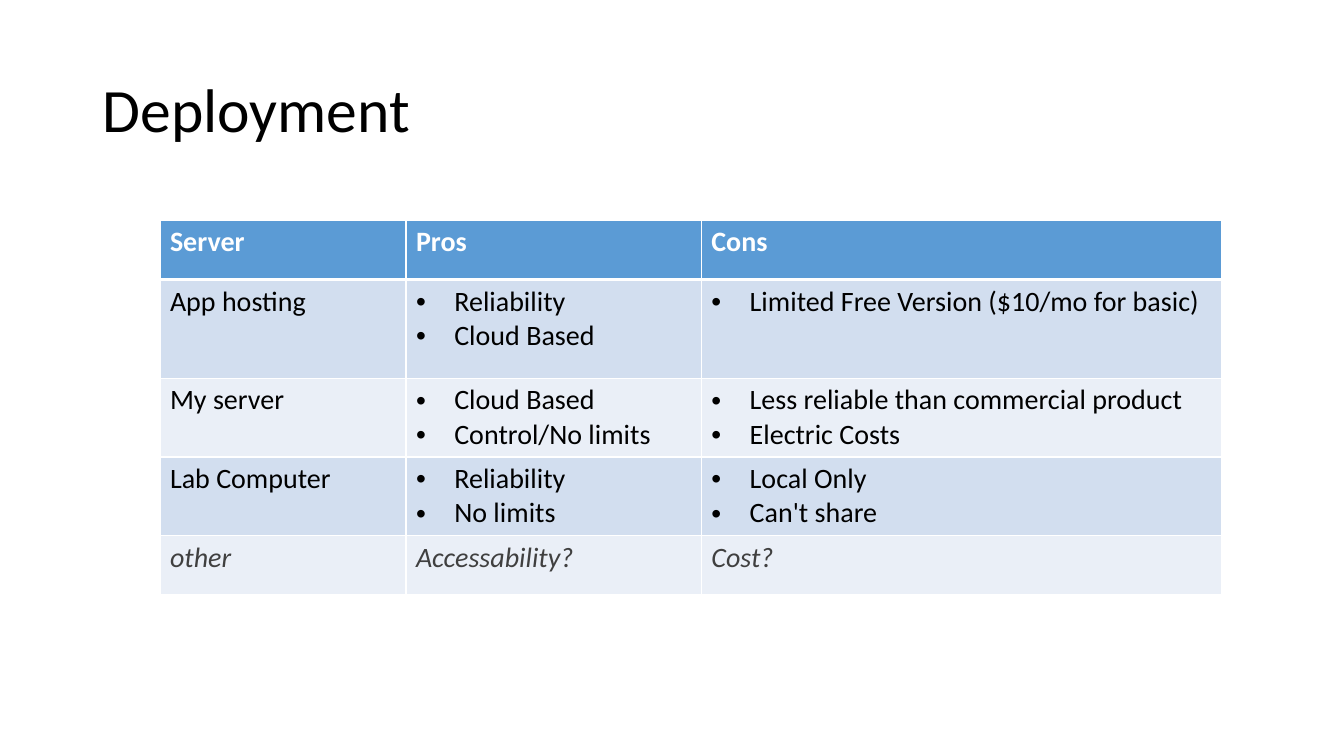
from dataclasses import dataclass

from lxml import etree
from pptx import Presentation
from pptx import util as u
from pptx.dml.color import RGBColor
from pptx.enum import text
from pptx.oxml import ns

SLIDE_WIDTH, SLIDE_HEIGHT = u.Inches(13.33), u.Inches(7.5)
FONT = "Calibri"
COLUMN_WIDTHS = (2.44, 2.93, 5.16)
ROW_HEIGHTS = (0.59, 0.98, 0.59, 0.59, 0.59)
HEADER_FILL = "5B9BD5"
BAND_FILLS = ("D2DEEF", "EAEFF7")
BULLET_INDENT = u.Inches(0.38)


@dataclass(frozen=True)
class ServerRow:
    server: str
    pros: tuple[str, ...]
    cons: tuple[str, ...]
    color: str = "000000"
    bold: bool = False
    italic: bool = False
    bulleted: bool = True


ROWS = (
    ServerRow("Server", ("Pros",), ("Cons",), "FFFFFF", bold=True, bulleted=False),
    ServerRow("App hosting", ("Reliability", "Cloud Based"),
              ("Limited Free Version ($10/mo for basic)",)),
    ServerRow("My server", ("Cloud Based", "Control/No limits"),
              ("Less reliable than commercial product", "Electric Costs")),
    ServerRow("Lab Computer", ("Reliability", "No limits"),
              ("Local Only", "Can't share")),
    ServerRow("other", ("Accessability?",), ("Cost?",), "404040",
              italic=True, bulleted=False),
)


def rgb(color: str) -> RGBColor:
    return RGBColor.from_string(color)


def across(share: float) -> int:
    return round(SLIDE_WIDTH * share)


def down(share: float) -> int:
    return round(SLIDE_HEIGHT * share)


def add_bullet(paragraph) -> None:
    properties = paragraph._p.get_or_add_pPr()
    properties.set("marL", str(BULLET_INDENT))
    properties.set("indent", str(-BULLET_INDENT))
    etree.SubElement(properties, ns.qn("a:buFont"), typeface="Arial")
    etree.SubElement(properties, ns.qn("a:buChar"), char="•")


def add_borders(cell, top: float, bottom: float) -> None:
    """Draw white borders; must run before the cell's fill is set."""
    properties = cell._tc.get_or_add_tcPr()
    for side, points in (("L", 1), ("R", 1), ("T", top), ("B", bottom)):
        line = etree.SubElement(properties, ns.qn(f"a:ln{side}"), w=str(u.Pt(points)))
        fill = etree.SubElement(line, ns.qn("a:solidFill"))
        etree.SubElement(fill, ns.qn("a:srgbClr"), val="FFFFFF")


def write_cell(cell, lines: tuple[str, ...], row: ServerRow, bulleted: bool) -> None:
    cell.text_frame.text = "\n".join(lines)
    for paragraph in cell.text_frame.paragraphs:
        font = paragraph.font
        font.name, font.size = FONT, u.Pt(20)
        font.bold, font.italic = row.bold, row.italic
        font.color.rgb = rgb(row.color)
        if bulleted:
            add_bullet(paragraph)


def add_title(slide, wording: str) -> None:
    title = slide.shapes.title
    title.left, title.top = across(0.069), down(0.053)
    title.width, title.height = across(0.863), down(0.193)
    title.text_frame.text = wording
    title.text_frame.vertical_anchor = text.MSO_ANCHOR.MIDDLE
    heading = title.text_frame.paragraphs[0]
    heading.alignment = text.PP_ALIGN.LEFT
    heading.line_spacing = 0.9
    heading.font.name, heading.font.size = FONT, u.Pt(44)
    heading.font.color.rgb = rgb("000000")


def add_server_table(slide) -> None:
    table = slide.shapes.add_table(
        len(ROWS), len(COLUMN_WIDTHS), across(0.119), down(0.291),
        u.Inches(sum(COLUMN_WIDTHS)), u.Inches(sum(ROW_HEIGHTS))).table
    for column, width in zip(table.columns, COLUMN_WIDTHS):
        column.width = u.Inches(width)
    for index, (row, height) in enumerate(zip(ROWS, ROW_HEIGHTS)):
        table.rows[index].height = u.Inches(height)
        fill = BAND_FILLS[(index - 1) % 2] if index else HEADER_FILL
        for column, lines in enumerate(((row.server,), row.pros, row.cons)):
            cell = table.cell(index, column)
            write_cell(cell, lines, row, row.bulleted and column > 0)
            add_borders(cell, top=3 if index == 1 else 1, bottom=1 if index else 3)
            cell.fill.solid()
            cell.fill.fore_color.rgb = rgb(fill)


def main() -> None:
    deck = Presentation()
    deck.slide_width, deck.slide_height = SLIDE_WIDTH, SLIDE_HEIGHT
    slide = deck.slides.add_slide(deck.slide_layouts.get_by_name("Title Only"))
    add_title(slide, "Deployment")
    add_server_table(slide)
    deck.save("out.pptx")


if __name__ == "__main__":
    main()
